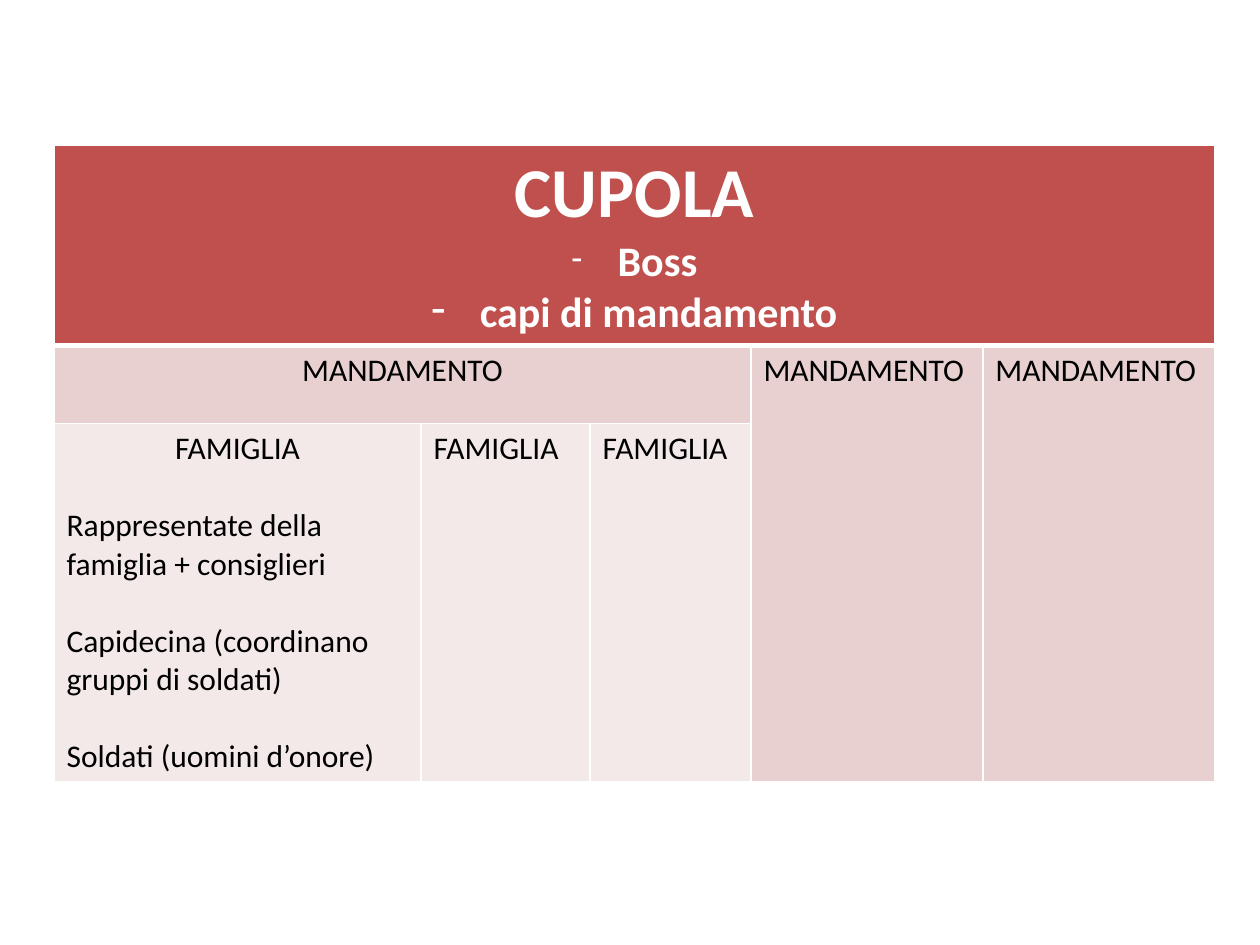
"""Build a slide with a table of the hierarchy from the Cupola down to the families."""
import pptx
import pptx.dml.color
import pptx.enum.text
import pptx.oxml
import pptx.oxml.ns
import pptx.util

PIXEL = 914400 // 126
COLORS = {"white": "FFFFFF", "black": "000000", "red": "C0504D", "rose": "E8D0D0", "pale": "F4E9E9"}
CENTER = pptx.enum.text.PP_ALIGN.CENTER
LEFT = pptx.enum.text.PP_ALIGN.LEFT
COLUMNS = [367, 169, 161, 232, 232]
ROWS = [193, 78, 358]


def add_child(parent, tag, **attributes):
    child = pptx.oxml.parse_xml(f'<a:{tag} {pptx.oxml.ns.nsdecls("a")}/>')
    for name, value in attributes.items():
        child.set(name, str(value))
    parent.append(child)
    return child


presentation = pptx.Presentation()
presentation.slide_width = 1260 * PIXEL
presentation.slide_height = 945 * PIXEL
slide = presentation.slides.add_slide(presentation.slide_layouts[6])
shape = slide.shapes.add_table(
    len(ROWS), len(COLUMNS), 54 * PIXEL, 145 * PIXEL, sum(COLUMNS) * PIXEL, sum(ROWS) * PIXEL
)
table = shape.table
for column, width in zip(table.columns, COLUMNS):
    column.width = width * PIXEL
for row, height in zip(table.rows, ROWS):
    row.height = height * PIXEL

for start, end in [((0, 0), (0, 4)), ((1, 0), (1, 2)), ((1, 3), (2, 3)), ((1, 4), (2, 4))]:
    table.cell(*start).merge(table.cell(*end))

for row_index, fill in enumerate(["red", "rose", "pale"]):
    for column_index in range(len(COLUMNS)):
        cell = table.cell(row_index, column_index)
        properties = cell._tc.get_or_add_tcPr()
        for side in ["lnL", "lnR", "lnT", "lnB"]:
            heavy = (row_index, side) in [(0, "lnB"), (1, "lnT")]
            line = add_child(properties, side, w=pptx.util.Pt(3 if heavy else 1))
            add_child(add_child(line, "solidFill"), "srgbClr", val=COLORS["white"])
        cell.fill.solid()
        cell.fill.fore_color.rgb = pptx.dml.color.RGBColor.from_string(COLORS[fill])

family_roles = [
    "Rappresentate della famiglia + consiglieri",
    "Capidecina (coordinano gruppi di soldati)",
    "Soldati (uomini d’onore)",
]
contents = {
    (0, 0): [
        (CENTER, False, 0, [("CUPOLA", 40)]),
        (CENTER, True, 0, [(" ", 18), ("Boss", 24)]),
        (CENTER, True, 0, [(" capi di mandamento", 24)]),
    ],
    (1, 0): [(CENTER, False, 0, [("MANDAMENTO", 18)])],
    (1, 3): [(LEFT, False, 0, [("MANDAMENTO", 18)])],
    (1, 4): [(LEFT, False, 0, [("MANDAMENTO", 18)])],
    (2, 0): [(CENTER, False, 0, [("FAMIGLIA", 18)])]
    + [(LEFT, False, 22, [(role, 18)]) for role in family_roles],
    (2, 1): [(LEFT, False, 0, [("FAMIGLIA", 18)])],
    (2, 2): [(LEFT, False, 0, [("FAMIGLIA", 18)])],
}
for position, paragraphs in contents.items():
    text_frame = table.cell(*position).text_frame
    heading = position[0] == 0
    for index, (alignment, bulleted, space, runs) in enumerate(paragraphs):
        paragraph = text_frame.add_paragraph() if index else text_frame.paragraphs[0]
        paragraph.alignment = alignment
        paragraph.space_before = pptx.util.Pt(space)
        if bulleted:
            paragraph_properties = paragraph._p.get_or_add_pPr()
            paragraph_properties.set("marL", str(39 * PIXEL))
            paragraph_properties.set("indent", str(-39 * PIXEL))
            add_child(paragraph_properties, "buFontTx")
            add_child(paragraph_properties, "buChar", char="-")
        for text, size in runs:
            run = paragraph.add_run()
            run.text = text
            run.font.name = "Calibri"
            run.font.size = pptx.util.Pt(size)
            run.font.bold = heading
            run.font.color.rgb = pptx.dml.color.RGBColor.from_string(COLORS["white" if heading else "black"])

presentation.save("out.pptx")
